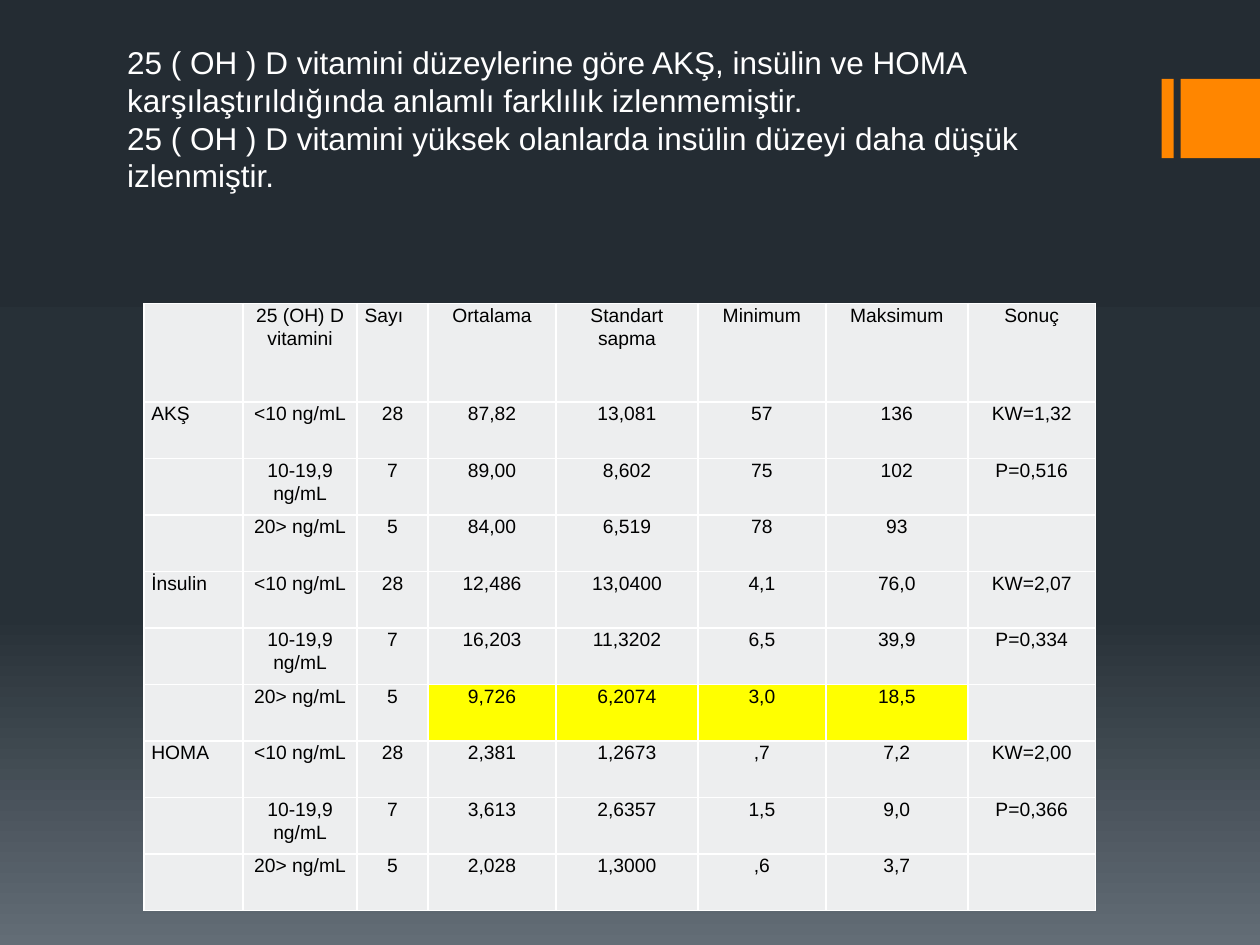
import copy

import lxml.etree
import pptx
import pptx.dml.color
import pptx.enum.dml
import pptx.enum.shapes
import pptx.enum.text
import pptx.oxml.ns
import pptx.util
from pptx.dml.color import RGBColor
from pptx.util import Cm

WHITE = RGBColor(0xFF, 0xFF, 0xFF)
BLACK = RGBColor(0x00, 0x00, 0x00)
ORANGE = RGBColor(0xFF, 0x86, 0x00)
YELLOW = RGBColor(0xFF, 0xFF, 0x00)
CELL_GREY = RGBColor(0xED, 0xEE, 0xEF)
BACKGROUND_STOPS = [
    (0, RGBColor(0x24, 0x2C, 0x33)),
    (0.65, RGBColor(0x27, 0x30, 0x37)),
    (1, RGBColor(0x63, 0x6D, 0x76)),
]
FONT = "Arial"

TITLE = [
    "25 ( OH ) D vitamini düzeylerine göre AKŞ, insülin ve HOMA "
    "karşılaştırıldığında anlamlı farklılık izlenmemiştir.",
    "25 ( OH ) D vitamini yüksek olanlarda insülin düzeyi daha düşük izlenmiştir.",
]
HEADER = ["", "25 (OH) D vitamini", "Sayı", "Ortalama", "Standart sapma",
          "Minimum", "Maksimum", "Sonuç"]
GROUPS = [("<10 ng/mL", "28"), ("10-19,9 ng/mL", "7"), ("20> ng/mL", "5")]
MEASURES = [
    ("AKŞ", ["KW=1,32", "P=0,516", ""], [
        ["87,82", "13,081", "57", "136"],
        ["89,00", "8,602", "75", "102"],
        ["84,00", "6,519", "78", "93"]]),
    ("İnsulin", ["KW=2,07", "P=0,334", ""], [
        ["12,486", "13,0400", "4,1", "76,0"],
        ["16,203", "11,3202", "6,5", "39,9"],
        ["9,726", "6,2074", "3,0", "18,5"]]),
    ("HOMA", ["KW=2,00", "P=0,366", ""], [
        ["2,381", "1,2673", ",7", "7,2"],
        ["3,613", "2,6357", "1,5", "9,0"],
        ["2,028", "1,3000", ",6", "3,7"]]),
]
COLUMN_WIDTHS = [2, 2.3, 1.43, 2.58, 2.86, 2.58, 2.86, 2.58]
HEADER_HEIGHT = 1.98
ROW_HEIGHT = 1.14
HIGHLIGHTED_ROW = 6
HIGHLIGHTED_COLUMNS = range(3, 7)


def paint_background(slide):
    fill = slide.background.fill
    fill.gradient()
    fill.gradient_angle = 270
    stop_list = slide.element.xpath(".//a:gsLst")[0]
    stop_list.insert(1, copy.deepcopy(stop_list[0]))
    for stop, (position, color) in zip(fill.gradient_stops, BACKGROUND_STOPS):
        stop.position = position
        stop.color.rgb = color


def add_bar(slide, left, width):
    shape = slide.shapes.add_shape(
        pptx.enum.shapes.MSO_SHAPE.RECTANGLE, Cm(left), Cm(1.59), Cm(width), Cm(1.6))
    shape.shadow.inherit = False
    shape.fill.solid()
    shape.fill.fore_color.rgb = ORANGE
    shape.line.fill.background()


def format_paragraph(paragraph, size, color, alignment):
    paragraph.alignment = alignment
    for run in paragraph.runs:
        run.font.name = FONT
        run.font.size = pptx.util.Pt(size)
        run.font.color.rgb = color


def fill_title(slide):
    title = slide.shapes.title
    title.left, title.top, title.width, title.height = Cm(2.31), Cm(0.74), Cm(20), Cm(3.33)
    text_frame = title.text_frame
    text_frame.text = "\n".join(TITLE)
    text_frame.word_wrap = True
    text_frame.auto_size = pptx.enum.text.MSO_AUTO_SIZE.SHAPE_TO_FIT_TEXT
    text_frame.vertical_anchor = pptx.enum.text.MSO_ANCHOR.TOP
    for paragraph in text_frame.paragraphs:
        format_paragraph(paragraph, 18, WHITE, pptx.enum.text.PP_ALIGN.LEFT)


def add_borders(cell):
    properties = cell._tc.get_or_add_tcPr()
    for side in ("a:lnL", "a:lnR", "a:lnT", "a:lnB"):
        line = lxml.etree.SubElement(
            properties, pptx.oxml.ns.qn(side), w=str(pptx.util.Pt(1)))
        solid = lxml.etree.SubElement(line, pptx.oxml.ns.qn("a:solidFill"))
        lxml.etree.SubElement(solid, pptx.oxml.ns.qn("a:srgbClr"), val=str(WHITE))


def format_cell(cell, text, color, alignment):
    cell.margin_left = cell.margin_right = Cm(0.15)
    cell.margin_top = cell.margin_bottom = 0
    add_borders(cell)
    cell.fill.solid()
    cell.fill.fore_color.rgb = color
    cell.text = text
    paragraph = cell.text_frame.paragraphs[0]
    paragraph.line_spacing = 1.07
    format_paragraph(paragraph, 11, BLACK, alignment)


def table_rows():
    rows = [HEADER]
    for name, results, statistics in MEASURES:
        for index, (level, count) in enumerate(GROUPS):
            label = name if index == 0 else ""
            rows.append([label, level, count, *statistics[index], results[index]])
    return rows


def add_results_table(slide):
    rows = table_rows()
    heights = [HEADER_HEIGHT] + [ROW_HEIGHT] * (len(rows) - 1)
    table = slide.shapes.add_table(
        len(rows), len(HEADER), Cm(2.9), Cm(6.12),
        Cm(sum(COLUMN_WIDTHS)), Cm(sum(heights))).table
    table.first_row = table.horz_banding = False
    for column, width in zip(table.columns, COLUMN_WIDTHS):
        column.width = Cm(width)
    for row, height in zip(table.rows, heights):
        row.height = Cm(height)
    for row_index, values in enumerate(rows):
        for column_index, text in enumerate(values):
            highlighted = row_index == HIGHLIGHTED_ROW and column_index in HIGHLIGHTED_COLUMNS
            left_aligned = column_index == 0 or text == "Sayı"
            format_cell(
                table.cell(row_index, column_index), text,
                YELLOW if highlighted else CELL_GREY,
                pptx.enum.text.PP_ALIGN.LEFT if left_aligned
                else pptx.enum.text.PP_ALIGN.CENTER)


def main():
    presentation = pptx.Presentation()
    presentation.slide_width = Cm(25.4)
    presentation.slide_height = Cm(19.05)
    slide = presentation.slides.add_slide(presentation.slide_layouts[5])
    paint_background(slide)
    add_bar(slide, 23.42, 0.24)
    add_bar(slide, 23.8, 1.6)
    add_results_table(slide)
    fill_title(slide)
    presentation.save("out.pptx")


if __name__ == "__main__":
    main()
